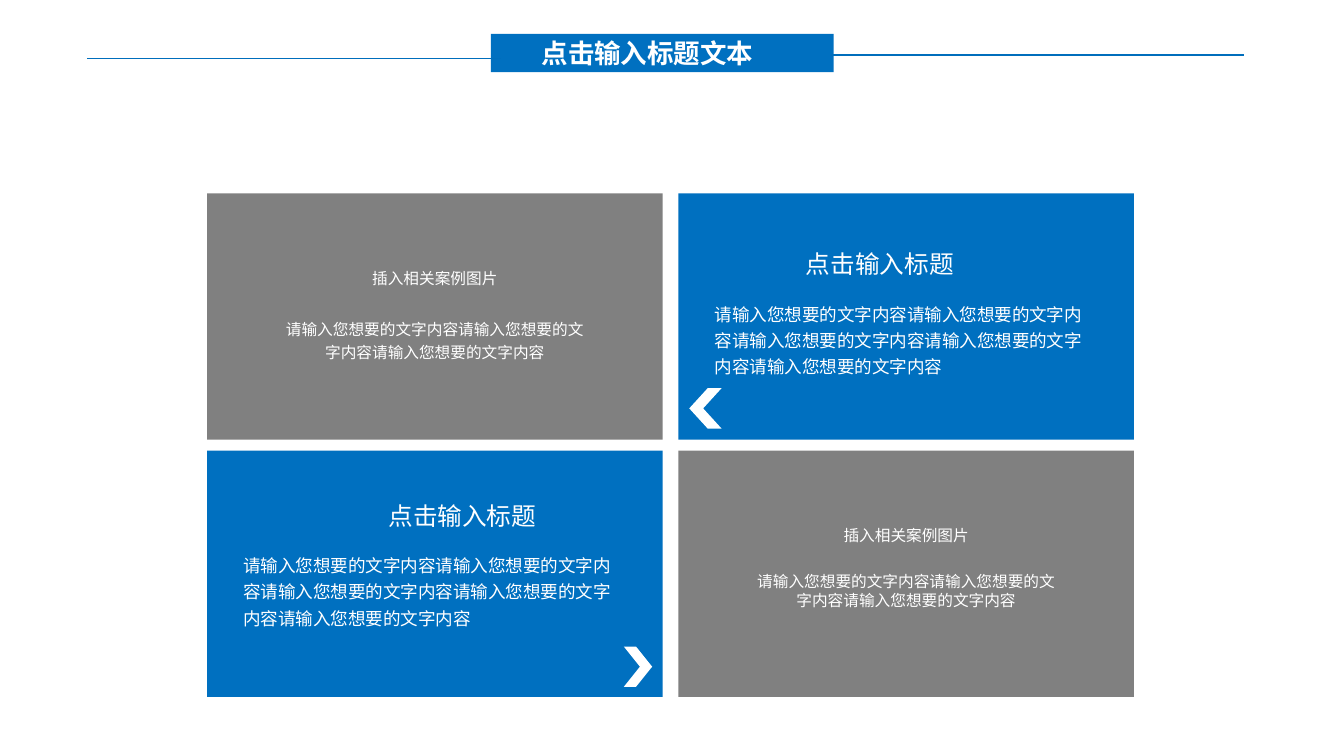
from dataclasses import dataclass

from lxml.etree import SubElement
from pptx import Presentation
from pptx.dml.color import RGBColor
from pptx.enum.shapes import MSO_CONNECTOR, MSO_SHAPE
from pptx.enum.text import MSO_ANCHOR, MSO_AUTO_SIZE, PP_ALIGN
from pptx.oxml.ns import qn
from pptx.util import Pt


@dataclass(frozen=True)
class Theme:
    blue: RGBColor = RGBColor(0x00, 0x70, 0xC0)
    rule: RGBColor = RGBColor(0x00, 0x6E, 0xBC)
    gray: RGBColor = RGBColor(0x80, 0x80, 0x80)
    white: RGBColor = RGBColor(0xFF, 0xFF, 0xFF)
    heading_font: str = "Noto Sans CJK SC"
    body_font: str = "Calibri"
    title_size: float = 14.2
    heading_size: float = 13.2
    body_size: float = 9.4
    caption_size: float = 8.4


THEME = Theme()

# Card grid, in points
GRID_LEFT, GRID_TOP = 111, 103.6
CARD_WIDTH, CARD_HEIGHT = 244, 132
COLUMN_STEP, ROW_STEP = 252.5, 137.8

SENTENCE = "请输入您想要的文字内容"


def place(shape, left, top, width, height):
    shape.left, shape.top = Pt(left), Pt(top)
    shape.width, shape.height = Pt(width), Pt(height)


def format_text(shape, text, size, font, align, bold=False, spacing=None):
    frame = shape.text_frame
    frame.text = text
    frame.margin_left = frame.margin_right = frame.margin_top = frame.margin_bottom = 0
    para = frame.paragraphs[0]
    para.alignment = align
    para.line_spacing = spacing
    span = para.runs[0]
    span.font.size = Pt(size)
    span.font.bold = bold
    span.font.name = font
    span.font.color.rgb = THEME.white
    # Chinese characters take the East Asian typeface
    latin = span.font._element.find(qn("a:latin"))
    east_asian = latin.makeelement(qn("a:ea"), {"typeface": THEME.heading_font})
    latin.addnext(east_asian)


def add_text(slide, left, top, width, height, text, size, font,
             align=PP_ALIGN.CENTER, spacing=None):
    box = slide.shapes.add_textbox(Pt(left), Pt(top), Pt(width), Pt(height))
    box.text_frame.word_wrap = True
    format_text(box, text, size, font, align, spacing=spacing)


def add_block(slide, kind, left, top, width, height, color):
    block = slide.shapes.add_shape(kind, Pt(left), Pt(top), Pt(width), Pt(height))
    block.shadow.inherit = False
    block.fill.solid()
    block.fill.fore_color.rgb = color
    block.line.fill.background()
    return block


def add_rule(slide, left, right, top):
    rule = slide.shapes.add_connector(
        MSO_CONNECTOR.STRAIGHT, Pt(left), Pt(top), Pt(right), Pt(top))
    rule.line.color.rgb = THEME.rule
    rule.line.width = Pt(0.75)
    SubElement(rule._element.spPr, qn("a:effectLst"))


def add_card(slide, column, row, color):
    left = GRID_LEFT + column * COLUMN_STEP
    top = GRID_TOP + row * ROW_STEP
    add_block(slide, MSO_SHAPE.RECTANGLE, left, top, CARD_WIDTH, CARD_HEIGHT, color)
    return left, top


def add_case_card(slide, column, row, spacing):
    left, top = add_card(slide, column, row, THEME.gray)
    add_text(slide, left + 55, top + 40.4, 134, 10, "插入相关案例图片",
             THEME.caption_size, THEME.heading_font)
    add_text(slide, left + 40.3, top + 65, 163.4, 24, SENTENCE * 3,
             THEME.caption_size, THEME.body_font, spacing=spacing)


def add_story_card(slide, column, row, heading_left, heading_top, body_top):
    left, top = add_card(slide, column, row, THEME.blue)
    add_text(slide, left + heading_left, top + heading_top, 177, 16, "点击输入标题",
             THEME.heading_size, THEME.heading_font)
    add_text(slide, left + 19.4, top + body_top, 205, 42.5, SENTENCE * 5,
             THEME.body_size, THEME.body_font, PP_ALIGN.LEFT, spacing=1.25)
    return left, top


def add_chevron(slide, left, top, width, flipped=False):
    chevron = add_block(slide, MSO_SHAPE.CHEVRON, left, top, width, 21.6, THEME.white)
    chevron.adjustments[0] = 0.57
    if flipped:
        chevron._element.spPr.find(qn("a:xfrm")).set("flipH", "1")


def add_title(slide):
    title = slide.shapes.title
    place(title, 263, 18.2, 183.6, 20.4)
    title.fill.solid()
    title.fill.fore_color.rgb = THEME.blue
    format_text(title, "点击输入标题文本", THEME.title_size, THEME.heading_font,
                PP_ALIGN.LEFT, bold=True)
    frame = title.text_frame
    frame.margin_left = Pt(27.2)
    frame.vertical_anchor = MSO_ANCHOR.MIDDLE
    frame.auto_size = MSO_AUTO_SIZE.NONE


def main():
    deck = Presentation()
    deck.slide_width, deck.slide_height = Pt(720), Pt(405)
    slide = deck.slides.add_slide(deck.slide_layouts[5])

    # Title banner with a rule on each side
    add_title(slide)
    add_rule(slide, 46.8, 268.6, 31.4)
    add_rule(slide, 445, 666.7, 29.5)

    # Top row: case, then its story pointing left
    add_case_card(slide, 0, 0, spacing=1.25)
    left, top = add_story_card(slide, 1, 0, 19.4, 29.6, 56.2)
    add_chevron(slide, left + 5.8, top + 104.4, 17.3, flipped=True)

    # Bottom row: story pointing right, then its case
    left, top = add_story_card(slide, 0, 1, 48.2, 27.2, 53.1)
    add_chevron(slide, left + 223.2, top + 105, 15.2)
    add_case_card(slide, 1, 1, spacing=1.0)

    deck.save("out.pptx")


if __name__ == "__main__":
    main()
